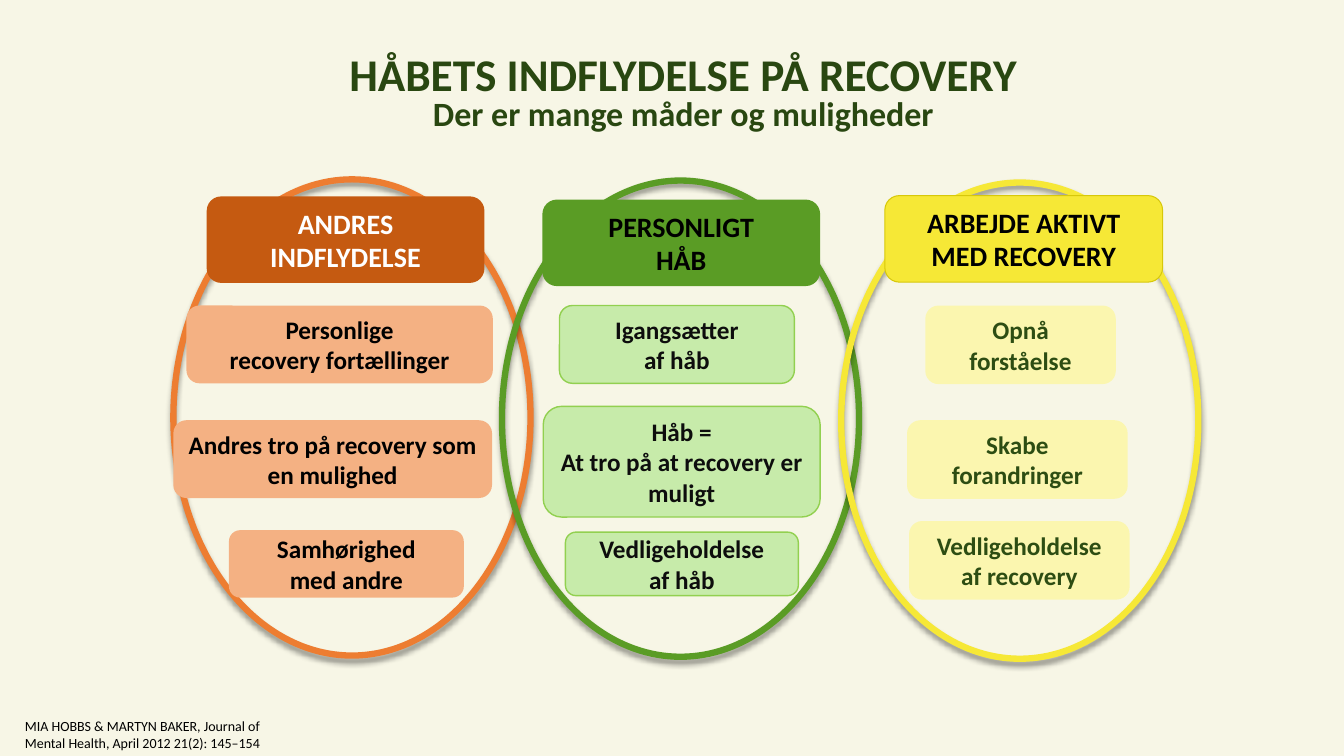
import pptx
import pptx.dml.color
import pptx.enum.shapes
import pptx.enum.text
import pptx.oxml
import pptx.oxml.ns
import pptx.util
from dataclasses import dataclass

Cm, Pt = pptx.util.Cm, pptx.util.Pt
SHAPE = pptx.enum.shapes.MSO_SHAPE
ANCHOR = pptx.enum.text.MSO_ANCHOR
ALIGN = pptx.enum.text.PP_ALIGN

# Content: places are left, top, width, height in centimetres
TITLE = "HÅBETS INDFLYDELSE PÅ RECOVERY"
SUBTITLE = "Der er mange måder og muligheder"
SOURCE = "MIA HOBBS & MARTYN BAKER, Journal of Mental Health, April 2012 21(2): 145–154"
OVAL_SIZE = (9, 12)
HEADING_SIZE = (7, 2.18)

GROUPS = [
    {
        "style": "others",
        "oval": (4.37, 4.52),
        "heading": ((5.21, 4.95), ["ANDRES", "INDFLYDELSE"]),
        "boxes": [
            ((4.7, 7.7, 7.72, 1.96), ["Personlige", "recovery fortællinger"]),
            ((4.37, 10.59, 8.03, 1.96), ["Andres tro på recovery som en mulighed"]),
            ((5.77, 13.36, 5.92, 1.7), ["Samhørighed", "med andre"]),
        ],
    },
    {
        "style": "personal",
        "oval": (12.65, 4.55),
        "heading": ((13.67, 5.03), ["PERSONLIGT", "HÅB"]),
        "boxes": [
            ((14.1, 7.7, 5.92, 1.96), ["Igangsætter", "af håb"]),
            ((13.69, 10.24, 6.98, 2.79), ["Håb =", "At tro på at recovery er muligt"]),
            ((14.25, 13.41, 5.87, 1.6), ["Vedligeholdelse", "af håb"]),
        ],
    },
    {
        "style": "active",
        "oval": (21.2, 4.6),
        "heading": ((22.3, 4.93), ["ARBEJDE AKTIVT", "MED RECOVERY"]),
        "boxes": [
            ((23.32, 7.7, 4.8, 1.98), ["Opnå", "forståelse"]),
            ((22.86, 10.59, 5.56, 1.98), ["Skabe", "forandringer"]),
            ((22.91, 13.13, 5.56, 1.98), ["Vedligeholdelse", "af recovery"]),
        ],
    },
]


@dataclass(frozen=True)
class GroupStyle:
    oval: str
    heading: str
    heading_text: str
    box: str
    box_text: str
    heading_line: str = ""
    box_line: str = ""


class Theme:
    font = "Calibri"
    background = "F7F6E6"
    title = "294711"
    source = "000000"
    title_size, subtitle_size = 32.4, 24.3
    heading_size, box_size, source_size = 20, 18, 10
    oval_line, heading_line, box_line = 4.5, 0.75, 1
    groups = {
        "others": GroupStyle("ED7D31", "C55A11", "FFFFFF", "F4B183", "000000"),
        "personal": GroupStyle("5A9C25", "5A9C25", "000000", "C7EBAA", "0D0D0D",
                               box_line="92D050"),
        "active": GroupStyle("F6E836", "F6E836", "000000", "FBF6AF", "2D4D13",
                             heading_line="D7C80A"),
    }


def color(value):
    return pptx.dml.color.RGBColor.from_string(value)


def add_span(para, text, size, text_color, bold=True):
    span = para.add_run()
    span.text = text
    span.font.name = Theme.font
    span.font.size = Pt(size)
    span.font.bold = bold
    span.font.color.rgb = color(text_color)


def add_panel(page, kind, place, fill="", line="", line_width=1.0):
    panel = page.shapes.add_shape(kind, *map(Cm, place))
    panel.shadow.inherit = False
    if fill:
        panel.fill.solid()
        panel.fill.fore_color.rgb = color(fill)
    else:
        panel.fill.background()
    if line:
        panel.line.color.rgb = color(line)
        panel.line.width = Pt(line_width)
    else:
        panel.line.fill.background()
    return panel


def write_lines(panel, lines, size, text_color):
    frame = panel.text_frame
    frame.word_wrap = True
    frame.vertical_anchor = ANCHOR.MIDDLE
    for index, text in enumerate(lines):
        para = frame.add_paragraph() if index else frame.paragraphs[0]
        para.alignment = ALIGN.CENTER
        add_span(para, text, size, text_color)


def drop_shadow(panel):
    effects = panel.element.spPr.find(pptx.oxml.ns.qn("a:effectLst"))
    effects.append(pptx.oxml.parse_xml(
        f'<a:outerShdw {pptx.oxml.ns.nsdecls("a")} blurRad="{Pt(4)}" dist="{Pt(3)}" '
        'dir="5400000" rotWithShape="0"><a:srgbClr val="000000">'
        '<a:alpha val="40000"/></a:srgbClr></a:outerShdw>'))


def add_title(page):
    box = page.shapes.title
    box.left, box.top, box.width, box.height = map(Cm, (4.09, 1.3, 26.26, 3.23))
    box.text_frame.word_wrap = True
    box.text_frame.vertical_anchor = ANCHOR.TOP
    para = box.text_frame.paragraphs[0]
    para.alignment = ALIGN.CENTER
    para.line_spacing = 0.8
    add_span(para, TITLE, Theme.title_size, Theme.title)
    para.add_line_break()
    add_span(para, SUBTITLE, Theme.subtitle_size, Theme.title)


def add_source(page):
    box = page.shapes.add_textbox(*map(Cm, (0.38, 17.96, 7.19, 1.09)))
    box.text_frame.word_wrap = True
    add_span(box.text_frame.paragraphs[0], SOURCE, Theme.source_size, Theme.source, bold=False)


def main():
    deck = pptx.Presentation()
    deck.slide_width, deck.slide_height = Cm(33.87), Cm(19.05)
    page = deck.slides.add_slide(deck.slide_layouts[5])
    page.background.fill.solid()
    page.background.fill.fore_color.rgb = color(Theme.background)
    add_title(page)

    # Overlapping ovals lie behind all boxes
    for group in GROUPS:
        style = Theme.groups[group["style"]]
        oval = add_panel(page, SHAPE.OVAL, group["oval"] + OVAL_SIZE,
                         line=style.oval, line_width=Theme.oval_line)
        drop_shadow(oval)

    # Boxes and headings of each group
    for group in GROUPS:
        style = Theme.groups[group["style"]]
        for place, lines in group["boxes"]:
            box = add_panel(page, SHAPE.ROUNDED_RECTANGLE, place,
                            style.box, style.box_line, Theme.box_line)
            write_lines(box, lines, Theme.box_size, style.box_text)
        corner, lines = group["heading"]
        heading = add_panel(page, SHAPE.ROUNDED_RECTANGLE, corner + HEADING_SIZE,
                            style.heading, style.heading_line, Theme.heading_line)
        write_lines(heading, lines, Theme.heading_size, style.heading_text)

    add_source(page)
    deck.save("out.pptx")


if __name__ == "__main__":
    main()
